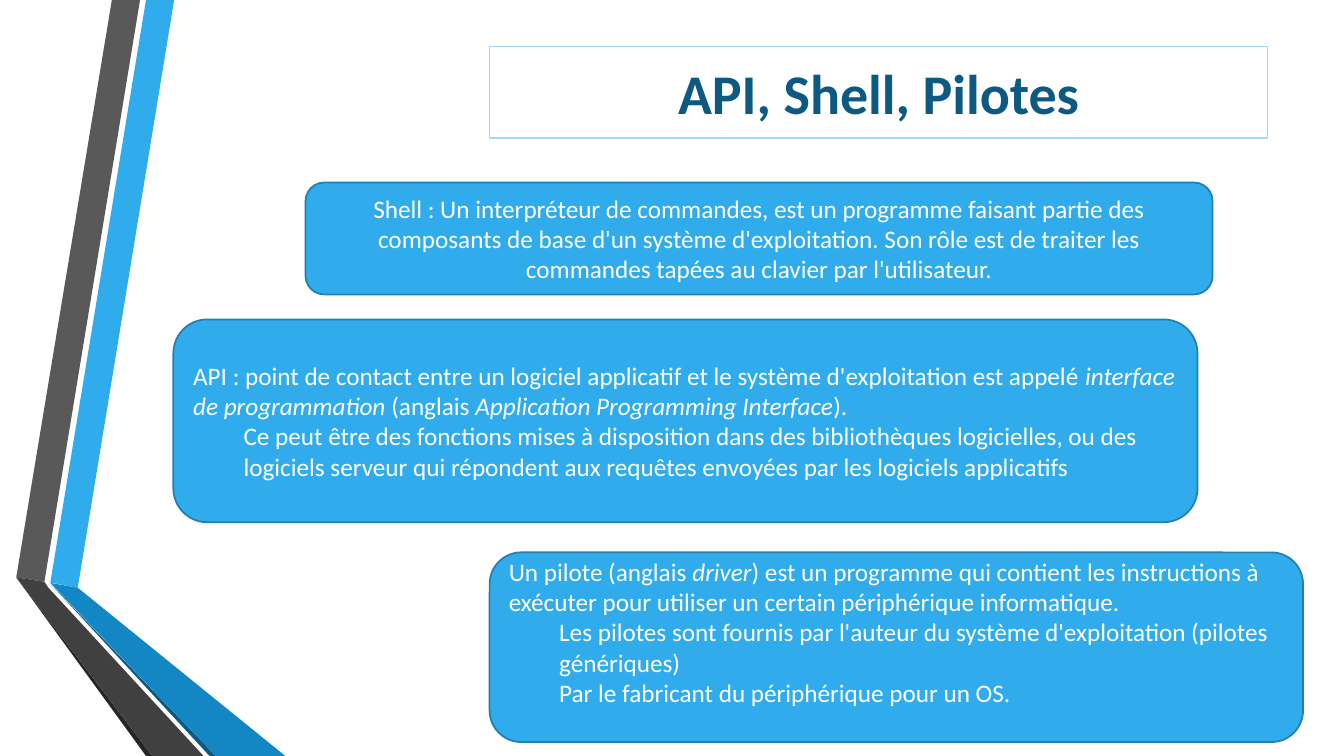
from pptx import Presentation
from pptx.dml.color import RGBColor
from pptx.enum.shapes import MSO_SHAPE
from pptx.enum.text import MSO_ANCHOR, PP_ALIGN
from pptx.util import Cm, Pt

COLORS = {
    "blue": "30ACEC", "mid_blue": "1287C3", "deep_blue": "0C5A82",
    "card_edge": "247FAF", "title_edge": "A2DAF6", "white": "FFFFFF",
    "grey": "595959", "dark_grey": "404040", "near_black": "262626",
}


def color(name):
    return RGBColor.from_string(COLORS[name])


def add_run(paragraph, text, size, color_name, bold=False, italic=False):
    run = paragraph.add_run()
    run.text = text
    run.font.name = "Calibri"
    run.font.size = Pt(size)
    run.font.bold = bold
    run.font.italic = italic
    run.font.color.rgb = color(color_name)


deck = Presentation()
deck.slide_width, deck.slide_height = Cm(33.87), Cm(19.05)
slide = deck.slides.add_slide(deck.slide_layouts[5])

# Folded ribbons on the left, corner points in cm
ribbons = [
    ("blue", [(1.27, 14.68), (1.96, 14.81), (4.39, 0), (3.68, 0)]),
    ("grey", [(3.53, 0), (2.82, 0), (0.41, 14.55), (1.12, 14.66)]),
    ("near_black", [(0.41, 14.55), (3.68, 19.05), (3.84, 19.05)]),
    ("deep_blue", [(1.27, 14.71), (5.28, 19.05), (5.44, 19.05)]),
    ("mid_blue", [(1.27, 14.69), (5.44, 19.05), (7.19, 19.05), (1.96, 14.81)]),
    ("dark_grey", [(5.13, 19.05), (1.22, 14.81), (1.12, 14.66),
                   (0.41, 14.55), (3.84, 19.05)]),
]
for fill, corners in ribbons:
    points = [(x * 100, y * 100) for x, y in corners]
    builder = slide.shapes.build_freeform(*points[0], scale=Cm(0.01))
    builder.add_line_segments(points[1:], close=True)
    ribbon = builder.convert_to_shape()
    ribbon.shadow.inherit = False
    ribbon.fill.solid()
    ribbon.fill.fore_color.rgb = color(fill)
    ribbon.line.fill.background()

# Title
heading = slide.shapes.title
heading.left, heading.top = Cm(12.34), Cm(1.17)
heading.width, heading.height = Cm(19.61), Cm(2.31)
heading.line.color.rgb = color("title_edge")
heading.line.width = Pt(1)
heading.text_frame.vertical_anchor = MSO_ANCHOR.MIDDLE
heading_line = heading.text_frame.paragraphs[0]
heading_line.alignment = PP_ALIGN.CENTER
add_run(heading_line, "API, Shell, Pilotes", 40, "deep_blue", bold=True)

# Definition cards: box in cm, alignment, bottom inset in cm,
# then paragraphs as (level, [(text, italic), ...])
definitions = [
    ((4.37, 8.05, 25.81, 5.11), PP_ALIGN.LEFT, 0.13, [
        (0, [("API : point de contact entre un logiciel applicatif et le "
              "système d'exploitation est appelé ", False),
             ("interface de programmation", True),
             (" (anglais ", False),
             ("Application Programming Interface", True),
             (").", False)]),
        (1, [("Ce peut être des fonctions mises à disposition dans des "
              "bibliothèques logicielles, ou des logiciels serveur qui "
              "répondent aux requêtes envoyées par les logiciels "
              "applicatifs", False)]),
    ]),
    ((12.34, 13.92, 20.5, 4.78), PP_ALIGN.LEFT, 0.9, [
        (0, [("Un pilote (anglais ", False),
             ("driver", True),
             (") est un programme qui contient les instructions à exécuter "
              "pour utiliser un certain périphérique informatique.", False)]),
        (1, [("Les pilotes sont fournis par l'auteur du système "
              "d'exploitation (pilotes génériques)", False)]),
        (1, [("Par le fabricant du périphérique pour un OS.", False)]),
    ]),
    ((7.7, 4.6, 22.86, 2.82), PP_ALIGN.CENTER, 0.13, [
        (0, [("Shell : Un interpréteur de commandes, est un programme faisant "
              "partie des composants de base d'un système d'exploitation. Son "
              "rôle est de traiter les commandes tapées au clavier par "
              "l'utilisateur.", False)]),
    ]),
]
for box, alignment, bottom_inset, paragraphs in definitions:
    card = slide.shapes.add_shape(
        MSO_SHAPE.FLOWCHART_ALTERNATE_PROCESS, *[Cm(v) for v in box])
    card.shadow.inherit = False
    card.fill.solid()
    card.fill.fore_color.rgb = color("blue")
    card.line.color.rgb = color("card_edge")
    card.line.width = Pt(1.25)
    frame = card.text_frame
    frame.word_wrap = True
    frame.vertical_anchor = MSO_ANCHOR.MIDDLE
    frame.margin_bottom = Cm(bottom_inset)
    for index, (level, pieces) in enumerate(paragraphs):
        paragraph = frame.add_paragraph() if index else frame.paragraphs[0]
        paragraph.alignment = alignment
        paragraph.level = level
        # Second-level lines are indented without a bullet
        paragraph_format = paragraph._p.get_or_add_pPr()
        paragraph_format.set("marL", str(Cm(1.27) * level))
        paragraph_format.set("indent", "0")
        for text, italic in pieces:
            add_run(paragraph, text, 18, "white", italic=italic)

deck.save("out.pptx")
